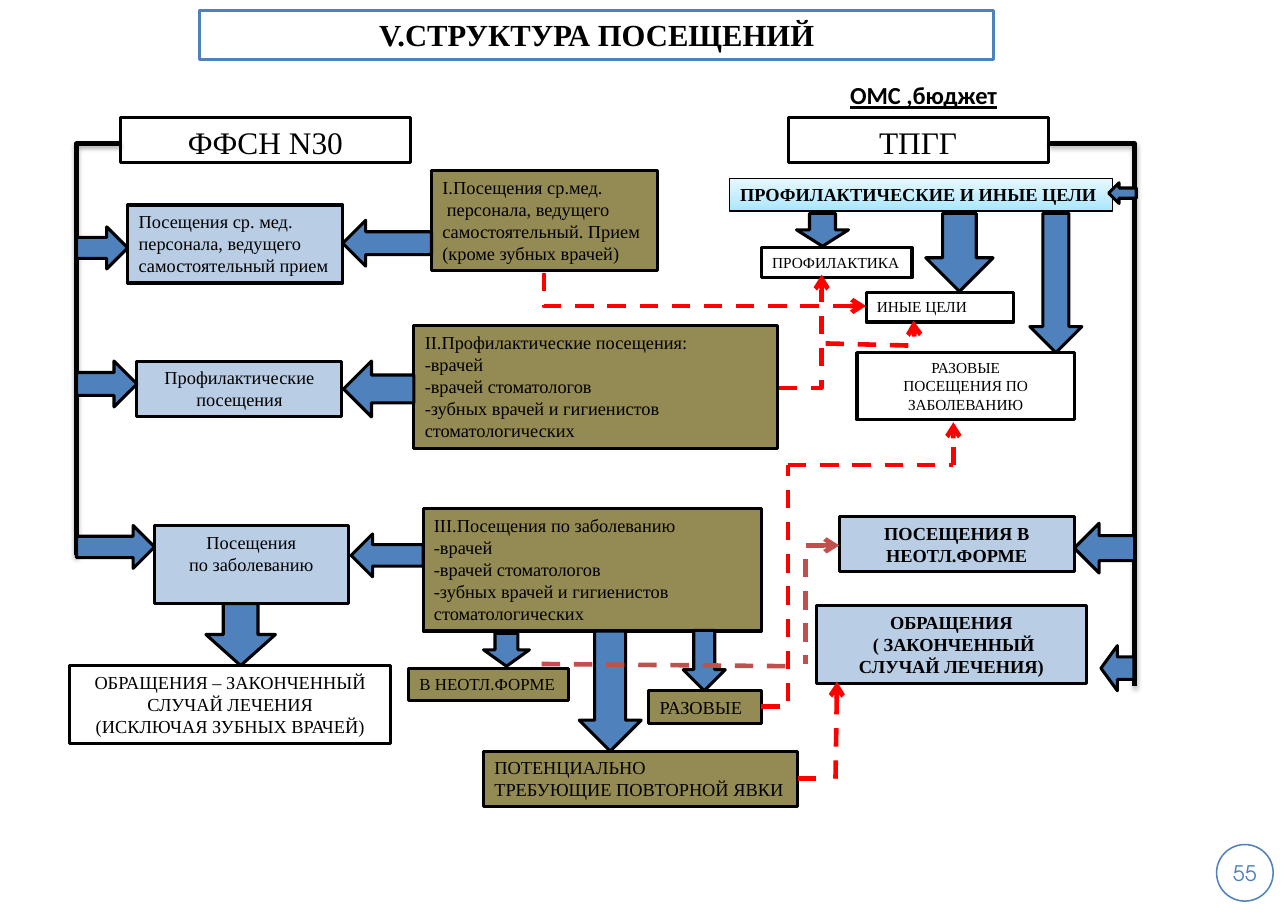
from copy import deepcopy

from lxml import etree
from pptx import Presentation
from pptx import util as u
from pptx.dml.color import RGBColor
from pptx.enum import dml, shapes, text
from pptx.oxml.ns import qn

BLACK = RGBColor(0, 0, 0)
WHITE = RGBColor(255, 255, 255)
BLUE = RGBColor(0x4F, 0x81, 0xBD)
PALE = RGBColor(0xB9, 0xCD, 0xE5)
OLIVE = RGBColor(0x94, 0x8A, 0x54)
RED = RGBColor(255, 0, 0)
BRICK = RGBColor(0xC0, 0x50, 0x4D)
SKY = RGBColor(0xA7, 0xE6, 0xFF), RGBColor(0xC1, 0xED, 0xFF), RGBColor(0xE7, 0xF8, 0xFF)

SERIF = "Times New Roman"
RIGHT = shapes.MSO_SHAPE.RIGHT_ARROW
LEFT = shapes.MSO_SHAPE.LEFT_ARROW
DOWN = shapes.MSO_SHAPE.DOWN_ARROW
RECT = shapes.MSO_SHAPE.RECTANGLE


def pts(*values):
    return [u.Pt(v) for v in values]


def write(sp, words, size, bold=False, center=True, wrap=True, font=SERIF, color=BLACK,
          anchor=text.MSO_ANCHOR.TOP):
    tf = sp.text_frame
    tf.text = words
    tf.word_wrap = wrap
    tf.auto_size = text.MSO_AUTO_SIZE.NONE
    tf.vertical_anchor = anchor
    for p in tf.paragraphs:
        p.alignment = text.PP_ALIGN.CENTER if center else text.PP_ALIGN.LEFT
        for r in p.runs:
            r.font.name, r.font.size, r.font.bold = font, u.Pt(size), bold
            r.font.color.rgb = color


def shape(s, kind, x, y, w, h, fill=BLUE, line=BLACK, weight=2):
    sp = s.shapes.add_shape(kind, *pts(x, y, w, h))
    sp.shadow.inherit = False
    if fill is None:
        sp.fill.background()
    else:
        sp.fill.solid()
        sp.fill.fore_color.rgb = fill
    sp.line.color.rgb = line
    sp.line.width = u.Pt(weight)
    return sp


def box(s, x, y, w, h, words, fill, size=12, **style):
    sp = shape(s, RECT, x, y, w, h, fill)
    write(sp, words, size, **style)
    return sp


def arrows(s, x, y, kind, places):
    for dx, dy, w, h in places:
        shape(s, kind, x + dx, y + dy, w, h)


def connector(s, x1, y1, x2, y2, color, elbow=False, dash=True, end=None):
    """An elbow runs horizontally first; end is headEnd or tailEnd for an arrowhead."""
    c = s.shapes.add_connector(shapes.MSO_CONNECTOR.STRAIGHT, *pts(x1, y1, x2, y2))
    c.line.color.rgb = color
    c.line.width = u.Pt(3)
    if dash:
        c.line.dash_style = dml.MSO_LINE.DASH
    spPr = c._element.spPr
    if elbow:
        spPr.find(qn("a:prstGeom")).set("prst", "bentConnector2")
    if end:
        etree.SubElement(spPr.find(qn("a:ln")), qn("a:" + end), type="arrow")
    etree.SubElement(spPr, qn("a:effectLst"))
    return c


def trunk(s, x1, y1, x2, y2):
    c = connector(s, x1, y1, x2, y2, BLACK, elbow=True, dash=False)
    shadow = etree.SubElement(c._element.spPr.find(qn("a:effectLst")), qn("a:outerShdw"),
                              blurRad=str(u.Pt(3.1)), dist=str(u.Pt(1.8)), dir="5400000")
    color = etree.SubElement(shadow, qn("a:srgbClr"), val=str(BLACK))
    etree.SubElement(color, qn("a:alpha"), val="35000")


def sky_gradient(sp):
    sp.fill.gradient()
    sp.fill.gradient_angle = 90
    stops = sp._element.spPr.find(qn("a:gradFill")).find(qn("a:gsLst"))
    stops.insert(1, deepcopy(stops[0]))
    for stop, color, position in zip(sp.fill.gradient_stops, SKY, (0, 0.35, 1)):
        stop.color.rgb = color
        stop.position = position


def heading(s, x, y, w, h):
    t = s.shapes.title
    t.left, t.top, t.width, t.height = pts(x, y, w, h)
    t.fill.solid()
    t.fill.fore_color.rgb = WHITE
    t.line.color.rgb = BLUE
    t.line.width = u.Pt(2)
    write(t, "V.CТРУКТУРА ПОСЕЩЕНИЙ", 20, bold=True)


def report_form(s, x, y):
    box(s, x + 28.5, y, 190, 29, "ФФСН N30", WHITE, 20.5)
    box(s, x + 33.5, y + 57, 140.5, 51,
        "Посещения ср. мед.\nперсонала, ведущего\nсамостоятельный прием", PALE,
        center=False, wrap=False)
    box(s, x + 39.5, y + 159, 134, 36, "Профилактические\nпосещения", PALE)
    box(s, x + 51, y + 266.5, 126.5, 51, "Посещения\nпо заболеванию", PALE)
    box(s, x - 4.5, y + 358, 210, 51,
        "ОБРАЩЕНИЯ – ЗАКОНЧЕННЫЙ СЛУЧАЙ ЛЕЧЕНИЯ\n(ИСКЛЮЧАЯ ЗУБНЫХ ВРАЧЕЙ)", WHITE)
    trunk(s, x + 28.5, y + 17, x, y + 286)
    arrows(s, x, y, RIGHT, [(0, 71.3, 33.5, 27.5), (0, 159, 39.5, 30), (0, 266.5, 51, 28)])
    arrows(s, x, y, DOWN, [(84.6, 317.5, 45.4, 40.5)])


def visits(s, x, y):
    doctors = "\n-врачей\n-врачей стоматологов\n-зубных врачей и гигиенистов стоматологических"
    for dx, dy, w, h, words, style in [
        (12, 0, 147.5, 65.5, "I.Посещения ср.мед.\n персонала, ведущего\n"
         "самостоятельный. Прием (кроме зубных врачей)", {}),
        (0.5, 101.5, 237.5, 80, "II.Профилактические посещения:" + doctors, {}),
        (6.5, 221, 221, 80, "III.Посещения по заболеванию" + doctors, {}),
        (-3, 325.5, 104.5, 21, "В НЕОТЛ.ФОРМЕ", {"size": 11, "wrap": False}),
        (154, 340, 73.5, 21.5, "РАЗОВЫЕ", {}),
        (46, 379.5, 205, 36, "ПОТЕНЦИАЛЬНО\nТРЕБУЮЩИЕ ПОВТОРНОЙ ЯВКИ", {"wrap": False}),
    ]:
        box(s, x + dx, y + dy, w, h, words, OLIVE, center=False, **style)
    arrows(s, x, y, LEFT, [(-46, 32.5, 58, 30), (-45.5, 124.5, 46, 36.5), (-40.5, 237.5, 47, 28)])
    arrows(s, x, y, DOWN, [(46, 302.5, 30, 21.5), (108.5, 301, 40.5, 78.5),
                           (176.5, 300.5, 27.5, 39.5)])


def program(s, x, y):
    budget = s.shapes.add_textbox(*pts(x + 72, y - 28, 170, 26.5))
    write(budget, "ОМС ,бюджет", 16, bold=True, center=False, font="Calibri")
    budget.text_frame.paragraphs[0].runs[0].font.underline = True
    box(s, x + 38.5, y, 170, 29, "ТПГГ", WHITE, 20.5)
    aims = box(s, x, y + 39.5, 250.5, 21.5, "ПРОФИЛАКТИЧЕСКИЕ И ИНЫЕ ЦЕЛИ", WHITE,
               bold=True, center=False, wrap=False)
    sky_gradient(aims)
    aims.line.width = u.Pt(0.75)
    box(s, x + 21, y + 85, 98.5, 19.5, "ПРОФИЛАКТИКА", WHITE, 10, center=False, wrap=False)
    box(s, x + 89.5, y + 114, 96.5, 19.5, "ИНЫЕ ЦЕЛИ", WHITE, 10, center=False)
    box(s, x + 83.5, y + 153.5, 142, 44, "РАЗОВЫЕ\nПОСЕЩЕНИЯ ПО ЗАБОЛЕВАНИЮ", WHITE, 10)
    box(s, x + 72, y + 260.5, 153.5, 36, "ПОСЕЩЕНИЯ В НЕОТЛ.ФОРМЕ", PALE, bold=True)
    box(s, x + 57, y + 319, 176.5, 51, "ОБРАЩЕНИЯ\n ( ЗАКОНЧЕННЫЙ СЛУЧАЙ ЛЕЧЕНИЯ)",
        PALE, bold=True)
    trunk(s, x + 208.5, y + 17, x + 265, y + 371.5)
    arrows(s, x, y, LEFT, [(248, 42.5, 18, 13.5), (225.5, 265, 39.5, 32.5), (243, 345, 21.5, 29.5)])
    arrows(s, x, y, DOWN, [(44, 62.5, 34, 21.5), (128.5, 62.5, 44, 51), (196.5, 62.5, 34, 91)])


def dashed_links(s, x, y):
    for x1, y1, x2, y2, color, elbow, end in [
        (212, 24, 1.5, 0.5, RED, True, "headEnd"),
        (155, 77.5, 183, 3.5, RED, True, "tailEnd"),
        (143.5, 286, 161, 128, RED, True, None),
        (161, 128, 269, 128, RED, False, None),
        (269, 128, 269, 100, RED, False, "tailEnd"),
        (167.5, 333, 183, 333, RED, False, None),
        (192, 333, 193, 269.5, RED, False, "tailEnd"),
        (185.5, 48.5, 244.5, 50, RED, False, None),
        (243.5, 43, 243, 33.5, RED, False, "tailEnd"),
        (0, 258, 168, 259.5, BRICK, False, None),
        (194.5, 180.5, 172.5, 258, BRICK, True, "headEnd"),
    ]:
        connector(s, x + x1, y + y1, x + x2, y + y2, color, elbow, end=end)


def page_number(s, x, y, size):
    sp = shape(s, shapes.MSO_SHAPE.OVAL, x, y, size, size, None, BLUE, 1)
    tf = sp.text_frame
    tf.margin_left = tf.margin_right = tf.margin_top = tf.margin_bottom = 0
    write(sp, "55", 14, font="TeX Gyre Adventor", color=BLUE, anchor=text.MSO_ANCHOR.MIDDLE)


def main():
    prs = Presentation()
    prs.slide_width, prs.slide_height = pts(841.68, 595.44)
    s = prs.slides.add_slide(prs.slide_layouts[5])
    heading(s, 130.5, 7, 519, 32)
    report_form(s, 50, 77)
    visits(s, 270, 111.5)
    program(s, 476.5, 77)
    dashed_links(s, 354, 176)
    page_number(s, 795, 552, 37)
    prs.save("out.pptx")


if __name__ == "__main__":
    main()
